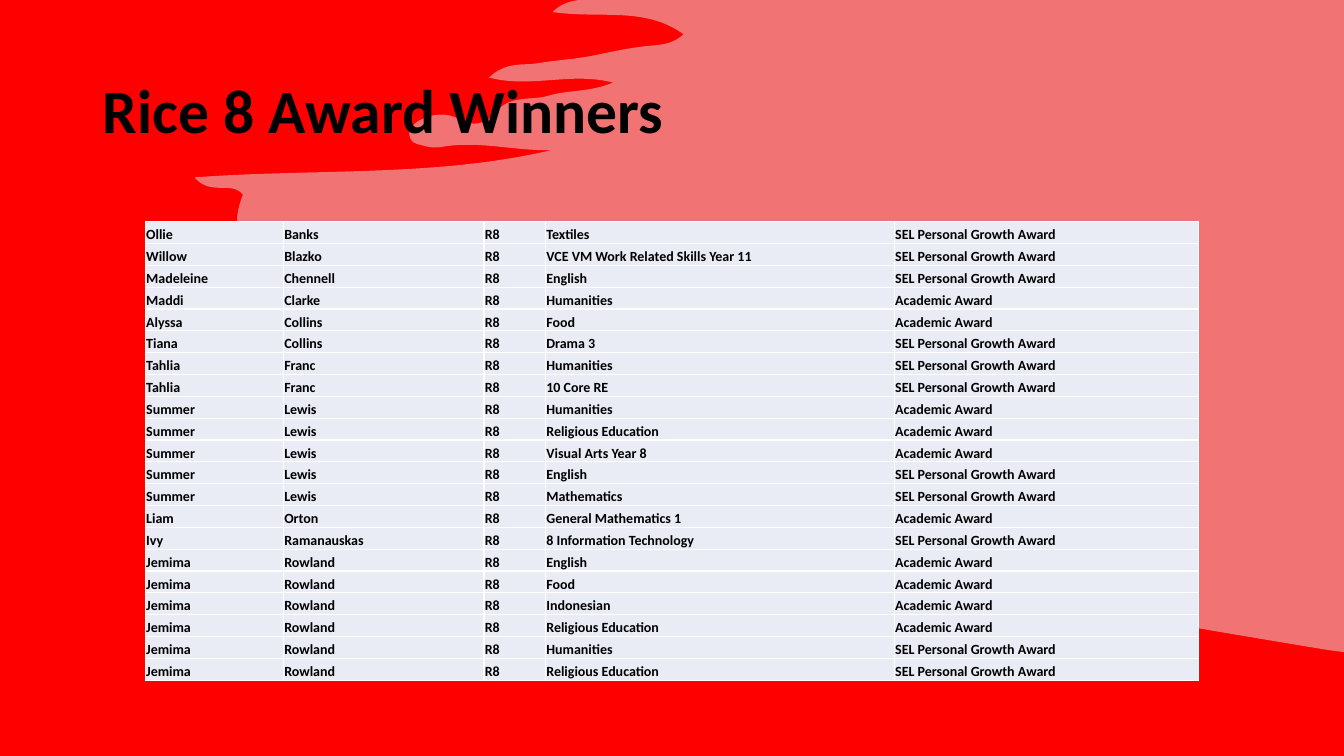
from lxml.etree import SubElement
from pptx import Presentation
from pptx.dml.color import RGBColor
from pptx.enum.text import MSO_ANCHOR, PP_ALIGN
from pptx.oxml.ns import qn
from pptx.util import Inches, Pt

TITLE = "Rice 8 Award Winners"
GROUP = "R8"
GROWTH, ACADEMIC = "SEL Personal Growth Award", "Academic Award"
WINNERS = [
    ("Ollie", "Banks", "Textiles", GROWTH),
    ("Willow", "Blazko", "VCE VM Work Related Skills Year 11", GROWTH),
    ("Madeleine", "Chennell", "English", GROWTH),
    ("Maddi", "Clarke", "Humanities", ACADEMIC),
    ("Alyssa", "Collins", "Food", ACADEMIC),
    ("Tiana", "Collins", "Drama 3", GROWTH),
    ("Tahlia", "Franc", "Humanities", GROWTH),
    ("Tahlia", "Franc", "10 Core RE", GROWTH),
    ("Summer", "Lewis", "Humanities", ACADEMIC),
    ("Summer", "Lewis", "Religious Education", ACADEMIC),
    ("Summer", "Lewis", "Visual Arts Year 8", ACADEMIC),
    ("Summer", "Lewis", "English", GROWTH),
    ("Summer", "Lewis", "Mathematics", GROWTH),
    ("Liam", "Orton", "General Mathematics 1", ACADEMIC),
    ("Ivy", "Ramanauskas", "8 Information Technology", GROWTH),
    ("Jemima", "Rowland", "English", ACADEMIC),
    ("Jemima", "Rowland", "Food", ACADEMIC),
    ("Jemima", "Rowland", "Indonesian", ACADEMIC),
    ("Jemima", "Rowland", "Religious Education", ACADEMIC),
    ("Jemima", "Rowland", "Humanities", GROWTH),
    ("Jemima", "Rowland", "Religious Education", GROWTH),
]

WIDTH, HEIGHT = 13.33, 7.5
TITLE_BOX = {"left": 0.92, "top": 0.4, "width": 11.5, "height": 1.45}
TABLE_LEFT, TABLE_TOP, TABLE_HEIGHT = 1.44, 2.2, 4.55
COLUMNS = [1.37, 1.99, 0.61, 3.46, 3.02]
CELL_FORMAT = {"margin_left": Inches(0.01), "margin_right": Inches(0.01),
               "margin_top": Inches(0.01), "margin_bottom": 0,
               "vertical_anchor": MSO_ANCHOR.BOTTOM}
RED, BRUSH, BLACK, WHITE, PALE = "FF0000", "E7E6E6", "000000", "FFFFFF", "E9EBF5"

BRUSH_START, BRUSH_END = (5.75, 0), (WIDTH, 6.47)
BRUSH_CURVES = [
    (5.67, 0.01, 5.57, 0.03, 5.48, 0.12), (5.95, 0.19, 6.39, 0.06, 6.78, 0.34),
    (6.64, 0.47, 6.48, 0.44, 6.32, 0.47), (6.16, 0.49, 6, 0.53, 5.84, 0.56),
    (5.67, 0.59, 5.49, 0.6, 5.32, 0.63), (5.18, 0.65, 5.02, 0.61, 4.85, 0.77),
    (5.27, 0.88, 5.66, 0.71, 6.08, 0.82), (5.84, 0.92, 5.63, 0.89, 5.44, 0.95),
    (5.27, 1, 5.06, 0.94, 4.92, 1.11), (4.81, 1.24, 4.69, 1.26, 4.55, 1.18),
    (4.42, 1.11, 4.28, 1.13, 4.15, 1.2), (4.11, 1.23, 4.06, 1.26, 4.06, 1.32),
    (4.06, 1.41, 4.12, 1.43, 4.18, 1.44), (4.24, 1.46, 4.31, 1.47, 4.37, 1.46),
    (4.74, 1.39, 5.1, 1.5, 5.47, 1.49), (4.31, 1.76, 3.14, 1.67, 1.93, 1.76),
    (2.09, 1.95, 2.29, 1.79, 2.41, 1.93), (2.3, 2.22, 2.34, 2.37, 2.58, 2.39),
    (2.8, 2.41, 3.04, 2.31, 3.16, 2.65), (3.2, 2.76, 3.41, 2.73, 3.55, 2.75),
    (3.84, 2.79, 4.14, 2.75, 4.42, 2.88), (4.53, 2.93, 4.6, 2.97, 4.55, 3.11),
    (4.49, 3.25, 4.56, 3.3, 4.66, 3.36), (4.73, 3.4, 4.83, 3.39, 4.89, 3.52),
    (4.28, 3.5, 3.69, 3.4, 3.09, 3.5), (3.75, 3.74, 4.47, 3.73, 5.12, 4.02),
    (5.1, 4.12, 4.95, 4.07, 4.94, 4.22), (5.28, 4.38, 5.69, 4.27, 6.05, 4.5),
    (5.84, 4.61, 5.65, 4.44, 5.45, 4.54), (5.52, 4.69, 8.4, 5.61, 8.92, 5.71),
    (9.78, 5.87, 11.95, 6.25, 13.18, 6.45),
]


def paint(fill, colour):
    fill.solid()
    fill.fore_color.rgb = RGBColor.from_string(colour)


def write(frame, text, size):
    para = frame.paragraphs[0]
    span = para.add_run()
    span.text = text
    for name, value in {"name": "Calibri", "size": Pt(size), "bold": True}.items():
        setattr(span.font, name, value)
    span.font.color.rgb = RGBColor.from_string(BLACK)
    return para


def bend(shape):
    segments = list(shape.element.iter(qn("a:lnTo")))[1:-1]
    for first, second, third in zip(segments[::3], segments[1::3], segments[2::3]):
        first.tag = qn("a:cubicBezTo")
        for extra in (second, third):
            first.append(extra[0])
            extra.getparent().remove(extra)


def add_brush(page):
    knots = [curve[at:at + 2] for curve in BRUSH_CURVES for at in (0, 2, 4)]
    outline = [(Inches(x), Inches(y)) for x, y in (BRUSH_START, *knots, BRUSH_END)]
    builder = page.shapes.build_freeform(Inches(WIDTH), 0)
    builder.add_line_segments(outline, close=True)
    brush = builder.convert_to_shape()
    bend(brush)
    brush.shadow.inherit = False
    brush.line.fill.background()
    paint(brush.fill, BRUSH)
    colour = next(brush.element.spPr.iter(qn("a:srgbClr")))
    SubElement(colour, qn("a:alpha"), val="50000")
    page.shapes.title.element.addprevious(brush.element)


def add_title(page):
    title = page.shapes.title
    for name, value in TITLE_BOX.items():
        setattr(title, name, Inches(value))
    title.text_frame.vertical_anchor = MSO_ANCHOR.MIDDLE
    para = write(title.text_frame, TITLE, 44)
    para.alignment = PP_ALIGN.LEFT
    para.line_spacing = 0.9


def add_borders(cell):
    properties = cell._tc.get_or_add_tcPr()
    for side in ("lnL", "lnR", "lnT", "lnB"):
        line = SubElement(properties, qn(f"a:{side}"), w=str(Pt(1)))
        SubElement(SubElement(line, qn("a:solidFill")), qn("a:srgbClr"), val=WHITE)


def add_winners(page):
    table = page.shapes.add_table(
        len(WINNERS), len(COLUMNS), Inches(TABLE_LEFT), Inches(TABLE_TOP),
        Inches(sum(COLUMNS)), Inches(TABLE_HEIGHT)).table
    table.first_row = table.horz_banding = False
    for column, width in zip(table.columns, COLUMNS):
        column.width = Inches(width)
    for row, (first, last, subject, award) in zip(table.rows, WINNERS):
        for cell, text in zip(row.cells, (first, last, GROUP, subject, award)):
            for name, value in CELL_FORMAT.items():
                setattr(cell, name, value)
            add_borders(cell)
            paint(cell.fill, PALE)
            write(cell.text_frame, text, 10)


def main():
    """Build the award winners slide."""
    deck = Presentation()
    deck.slide_width, deck.slide_height = Inches(WIDTH), Inches(HEIGHT)
    page = deck.slides.add_slide(deck.slide_layouts[5])
    paint(page.background.fill, RED)
    add_brush(page)
    add_title(page)
    add_winners(page)
    deck.save("out.pptx")


if __name__ == "__main__":
    main()
